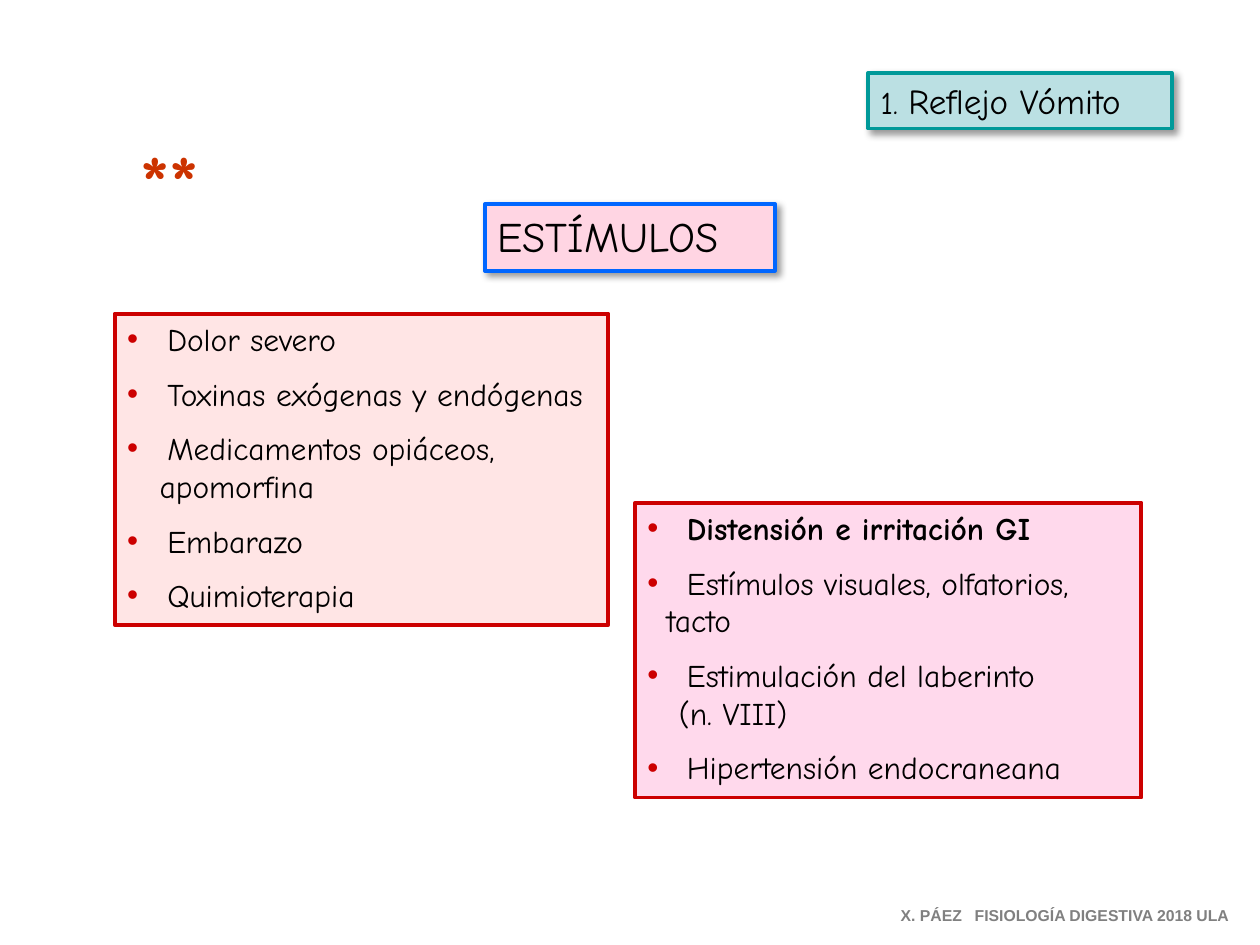
import pptx
import pptx.util
import pptx.dml.color
import pptx.enum.shapes
import pptx.enum.text
import pptx.oxml
import pptx.oxml.ns

Pt = pptx.util.Pt
ALIGN = pptx.enum.text.PP_ALIGN
COMIC = "Comic Neue"
RED, BLACK = "CC0000", "000000"
ITEM_GAP = 9.6

# Content: each item is a list of lines; the first line carries the bullet
general_stimuli = [
    ["Dolor severo"],
    ["Toxinas exógenas y endógenas"],
    ["Medicamentos opiáceos,", "apomorfina"],
    ["Embarazo"],
    ["Quimioterapia"],
]
reflex_stimuli = [
    ["Distensión e irritación GI"],
    ["Estímulos visuales, olfatorios,", "tacto"],
    ["Estimulación del laberinto", "(n. VIII)"],
    ["Hipertensión endocraneana"],
]
bold_item = "Distensión e irritación GI"

# box, fill, items, text indent, indent of each continuation line
lists = [
    ((65.5, 179.3, 282.2, 177.8), "FFE5E5", general_stimuli, 23,
     {"apomorfina": 18.6}),
    ((362.9, 287.3, 289.4, 168.5), "FFD9EC", reflex_stimuli, 22.5,
     {"tacto": 11, "(n. VIII)": 18}),
]
# box, fill, line, runs of (text, size)
headings = [
    ((277.2, 116.6, 165.6, 38.2), "FFD5E3", "0066FF", [("ESTÍMULOS", 24)]),
    ((496.1, 41.8, 173.5, 31.7), "BBE0E3", "009999",
     [("1. ", 18), ("Reflejo Vómito", 20)]),
]

SHADOW = ('<a:effectLst %s><a:outerShdw blurRad="%d" dist="%d" dir="2700000" '
          'algn="tl"><a:srgbClr val="000000"><a:alpha val="%d"/></a:srgbClr>'
          '</a:outerShdw></a:effectLst>')


def color(value):
    return pptx.dml.color.RGBColor.from_string(value)


def shadow(blur, distance, opacity):
    return pptx.oxml.parse_xml(SHADOW % (
        pptx.oxml.ns.nsdecls("a"), Pt(blur), Pt(distance), opacity * 1000))


def add_run(paragraph, text, size, bold=False, hue=BLACK, face=COMIC):
    run = paragraph.add_run()
    run.text = text
    run.font.size = Pt(size)
    run.font.bold = bold
    run.font.color.rgb = color(hue)
    run.font.name = face
    return run


def add_panel(box, fill, line):
    panel = slide.shapes.add_shape(
        pptx.enum.shapes.MSO_SHAPE.RECTANGLE, *map(Pt, box))
    panel.shadow.inherit = False
    panel.fill.solid()
    panel.fill.fore_color.rgb = color(fill)
    panel.line.color.rgb = color(line)
    panel.line.width = Pt(2.25)
    panel.text_frame.word_wrap = True
    panel.text_frame.vertical_anchor = pptx.enum.text.MSO_ANCHOR.TOP
    return panel


def add_label(box):
    frame = slide.shapes.add_textbox(*map(Pt, box)).text_frame
    frame.word_wrap = True
    return frame.paragraphs[0]


def add_bullet(properties):
    for xml in ('<a:buClr %s><a:srgbClr val="' + RED + '"/></a:buClr>',
                '<a:buFont %s typeface="Arial"/>',
                '<a:buChar %s char="•"/>'):
        properties.append(pptx.oxml.parse_xml(xml % pptx.oxml.ns.nsdecls("a")))


deck = pptx.Presentation()
deck.slide_width, deck.slide_height = Pt(720), Pt(540)
slide = deck.slides.add_slide(deck.slide_layouts[6])

# Bulleted lists
for box, fill, items, indent, continuations in lists:
    frame = add_panel(box, fill, RED).text_frame
    for number, item in enumerate(items):
        for line_number, line in enumerate(item):
            first = number == line_number == 0
            paragraph = frame.paragraphs[0] if first else frame.add_paragraph()
            paragraph.alignment = ALIGN.LEFT
            if number and line_number == 0:
                paragraph.space_before = Pt(ITEM_GAP)
            properties = paragraph._p.get_or_add_pPr()
            left = continuations.get(line, indent)
            properties.set("marL", str(Pt(left)))
            if line_number == 0:
                properties.set("indent", str(-Pt(left)))
                add_bullet(properties)
            add_run(paragraph, line, 18, line == bold_item)

# Headings
for box, fill, line, runs in headings:
    panel = add_panel(box, fill, line)
    effects = panel._element.spPr.find(pptx.oxml.ns.qn("a:effectLst"))
    effects.getparent().replace(effects, shadow(4, 3, 40))
    paragraph = panel.text_frame.paragraphs[0]
    paragraph.alignment = ALIGN.LEFT
    for text, size in runs:
        add_run(paragraph, text, size)

# Asterisks with a text shadow
mark = add_label((65.5, 72.7, 62.6, 60.5))
mark.alignment = ALIGN.CENTER
stars = add_run(mark, "**", 44, True, "CC3300")
fill = stars._r.rPr.find(pptx.oxml.ns.qn("a:solidFill"))
fill.addnext(shadow(0, 3, 100))

# Footer, its two parts set apart by a tab stop
footer = add_label((507.6, 514.1, 205.9, 18))
footer._p.get_or_add_pPr().append(pptx.oxml.parse_xml(
    '<a:tabLst %s><a:tab pos="%d" algn="l"/></a:tabLst>'
    % (pptx.oxml.ns.nsdecls("a"), Pt(42.3))))
for text in ("X. PÁEZ\t", "FISIOLOGÍA DIGESTIVA 2018 ULA"):
    add_run(footer, text, 9, True, "808080", "Arial")

deck.save("out.pptx")
